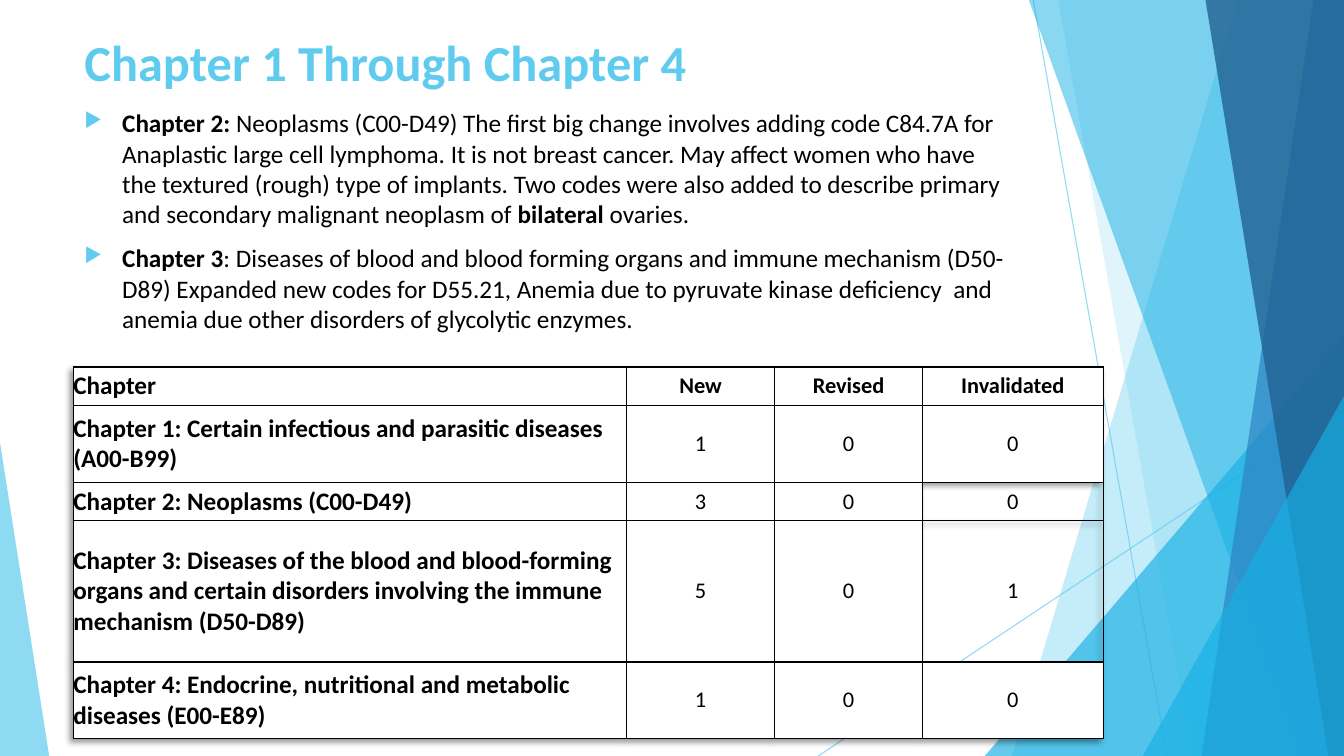
from lxml import etree
from pptx import Presentation
from pptx.dml.color import RGBColor
from pptx.enum.shapes import MSO_CONNECTOR, MSO_SHAPE
from pptx.enum.text import MSO_ANCHOR, PP_ALIGN
from pptx.oxml.ns import qn
from pptx.util import Cm, Pt

STRAIGHT = MSO_CONNECTOR.STRAIGHT
TRIANGLE = MSO_SHAPE.ISOSCELES_TRIANGLE
MIDDLE, TOP = MSO_ANCHOR.MIDDLE, MSO_ANCHOR.TOP
LEFT, CENTER = PP_ALIGN.LEFT, PP_ALIGN.CENTER

COLORS = {"sky": "5FCBEF", "cyan": "17B0E4", "blue": "2E83C3",
          "navy": "226292", "black": "000000", "white": "FFFFFF"}
WIDTH, HEIGHT = 33.87, 19.05

BANDS = [(31.19, 25.5, "sky", 36), (26.67, 30.05, "sky", 20)]
FRONT_BANDS = [(25.93, 32.79, "cyan", 50), (33.1, 30.28, "blue", 70),
               (30.38, 33.48, "navy", 80)]
BODY = [
    [("Chapter 2:", True),
     (" Neoplasms (C00-D49) The first big change involves adding code C84.7A "
      "for Anaplastic large cell lymphoma. It is not breast cancer. May affect "
      "women who have the textured (rough) type of implants. Two codes were also "
      "added to describe primary and secondary malignant neoplasm of ", False),
     ("bilateral ", True), ("ovaries.", False)],
    [("Chapter 3", True),
     (": Diseases of blood and blood forming organs and immune mechanism "
      "(D50-D89) Expanded new codes for D55.21, Anemia due to pyruvate kinase "
      "deficiency  and anemia due other disorders of glycolytic enzymes.", False)],
]
ROWS = [
    ("Chapter", "New", "Revised", "Invalidated"),
    ("Chapter 1: Certain infectious and parasitic diseases (A00-B99)", "1", "0", "0"),
    ("Chapter 2: Neoplasms (C00-D49)", "3", "0", "0"),
    ("Chapter 3: Diseases of the blood and blood-forming organs and certain "
     "disorders involving the immune mechanism (D50-D89)", "5", "0", "1"),
    ("Chapter 4: Endocrine, nutritional and metabolic diseases (E00-E89)", "1", "0", "0"),
]
COL_WIDTHS = [13.94, 3.73, 3.73, 4.55]
ROW_HEIGHTS = [0.97, 1.93, 0.97, 3.56, 1.93]
CLEAR_CELLS = {(2, 3), (3, 3)}


def add(parent, tag, **attrs):
    el = etree.SubElement(parent, qn(tag))
    for name, value in attrs.items():
        el.set(name, str(value))
    return el


def write(p, text, size=18, color="black", bold=False, align=LEFT, font="Calibri"):
    p.alignment = align
    r = p.add_run()
    r.text = text
    r.font.name, r.font.size, r.font.bold = font, Pt(size), bold
    r.font.color.rgb = RGBColor.from_string(COLORS[color])


class Deck:
    """Draw the elements of one slide in a shared style."""

    def __init__(self):
        self.prs = Presentation()
        self.prs.slide_width, self.prs.slide_height = Cm(WIDTH), Cm(HEIGHT)
        self.s = self.prs.slides.add_slide(self.prs.slide_layouts[6])

    def paint(self, fmt, color, alpha):
        fmt.solid()
        fmt.fore_color.rgb = RGBColor.from_string(COLORS[color])
        return alpha * 1000

    def fade(self, parent, alpha):
        for clr in parent.iter(qn("a:srgbClr")):
            add(clr, "a:alpha", val=alpha * 1000)

    def finish(self, sp, color, alpha):
        sp.shadow.inherit = False
        sp.line.fill.background()
        self.paint(sp.fill, color, alpha)
        self.fade(sp._element.spPr, alpha)

    def line(self, x1, y1, x2, y2):
        c = self.s.shapes.add_connector(STRAIGHT, Cm(x1), Cm(y1), Cm(x2), Cm(y2))
        c.line.width = Pt(0.75)
        self.paint(c.line.fill, "sky", 70)
        self.fade(c._element.spPr, 70)
        add(c._element.spPr, "a:effectLst")

    def band(self, top, bottom, color, alpha):
        fb = self.s.shapes.build_freeform(Cm(top), 0)
        corners = [(WIDTH, 0), (WIDTH, HEIGHT), (bottom, HEIGHT)]
        fb.add_line_segments([(Cm(x), Cm(y)) for x, y in corners])
        self.finish(fb.convert_to_shape(), color, alpha)

    def triangle(self, x, y, w, apex, color, alpha):
        sp = self.s.shapes.add_shape(TRIANGLE, Cm(x), Cm(y), Cm(w), Cm(HEIGHT - y))
        sp.adjustments[0] = apex
        self.finish(sp, color, alpha)

    def textbox(self, x, y, w, h, anchor):
        tf = self.s.shapes.add_textbox(Cm(x), Cm(y), Cm(w), Cm(h)).text_frame
        tf.word_wrap, tf.vertical_anchor = True, anchor
        return tf

    def bullets(self, tf, items):
        for i, runs in enumerate(items):
            p = tf.add_paragraph() if i else tf.paragraphs[0]
            p.space_before = Pt(10)
            pPr = p._p.get_or_add_pPr()
            pPr.set("marL", str(Cm(0.95)))
            pPr.set("indent", str(-Cm(0.95)))
            add(add(pPr, "a:buClr"), "a:srgbClr", val=COLORS["sky"])
            add(pPr, "a:buSzPct", val=80000)
            add(pPr, "a:buChar", char="▶")
            for text, bold in runs:
                write(p, text, bold=bold)

    def cell(self, cell, text, filled, **fmt):
        cell.margin_left = cell.margin_right = cell.margin_top = cell.margin_bottom = 0
        cell.vertical_anchor = MIDDLE
        write(cell.text_frame.paragraphs[0], text, **fmt)
        tcPr = cell._tc.get_or_add_tcPr()
        for side in ("a:lnL", "a:lnR", "a:lnT", "a:lnB"):
            ln = add(tcPr, side, w=Pt(1))
            add(add(ln, "a:solidFill"), "a:srgbClr", val=COLORS["black"])
        if filled:
            self.paint(cell.fill, "white", 100)
        else:
            cell.fill.background()

    def table(self, x, y):
        frame = self.s.shapes.add_table(len(ROWS), len(COL_WIDTHS), Cm(x), Cm(y),
                                        Cm(sum(COL_WIDTHS)), Cm(sum(ROW_HEIGHTS)))
        tbl = frame.table
        tbl.first_row = tbl.horz_banding = False
        tblPr = tbl._tbl.tblPr
        effects = add(tblPr, "a:effectLst")
        shadow = add(effects, "a:outerShdw", blurRad=50800, dist=38100, dir=8100000)
        add(add(shadow, "a:srgbClr", val=COLORS["black"]), "a:alpha", val=40000)
        tblPr.insert(0, effects)
        for col, w in zip(tbl.columns, COL_WIDTHS):
            col.width = Cm(w)
        for i, (row, h) in enumerate(zip(tbl.rows, ROW_HEIGHTS)):
            row.height = Cm(h)
            for j, text in enumerate(ROWS[i]):
                self.cell(tbl.cell(i, j), text, (i, j) not in CLEAR_CELLS,
                          size=16 if j else 18, bold=i == 0 or j == 0,
                          align=CENTER if j else LEFT)


def main():
    deck = Deck()
    deck.line(26.04, 0, 29.41, HEIGHT)
    deck.line(WIDTH, 10.24, 20.62, HEIGHT)
    for band in BANDS:
        deck.band(*band)
    deck.triangle(24.82, 8.46, 9.05, 1, "cyan", 66)
    for band in FRONT_BANDS:
        deck.band(*band)
    deck.triangle(28.8, 9.98, 5.07, 1, "cyan", 66)
    deck.triangle(0, 11.15, 1.24, 0, "sky", 70)
    title = deck.textbox(1.88, 0.51, 23.88, 2.08, MIDDLE)
    write(title.paragraphs[0], "Chapter 1 Through Chapter 4", size=36,
          color="sky", bold=True)
    deck.bullets(deck.textbox(1.88, 2.59, 23.88, 13.92, TOP), BODY)
    deck.table(1.85, 9.25)
    deck.prs.save("out.pptx")


if __name__ == "__main__":
    main()
